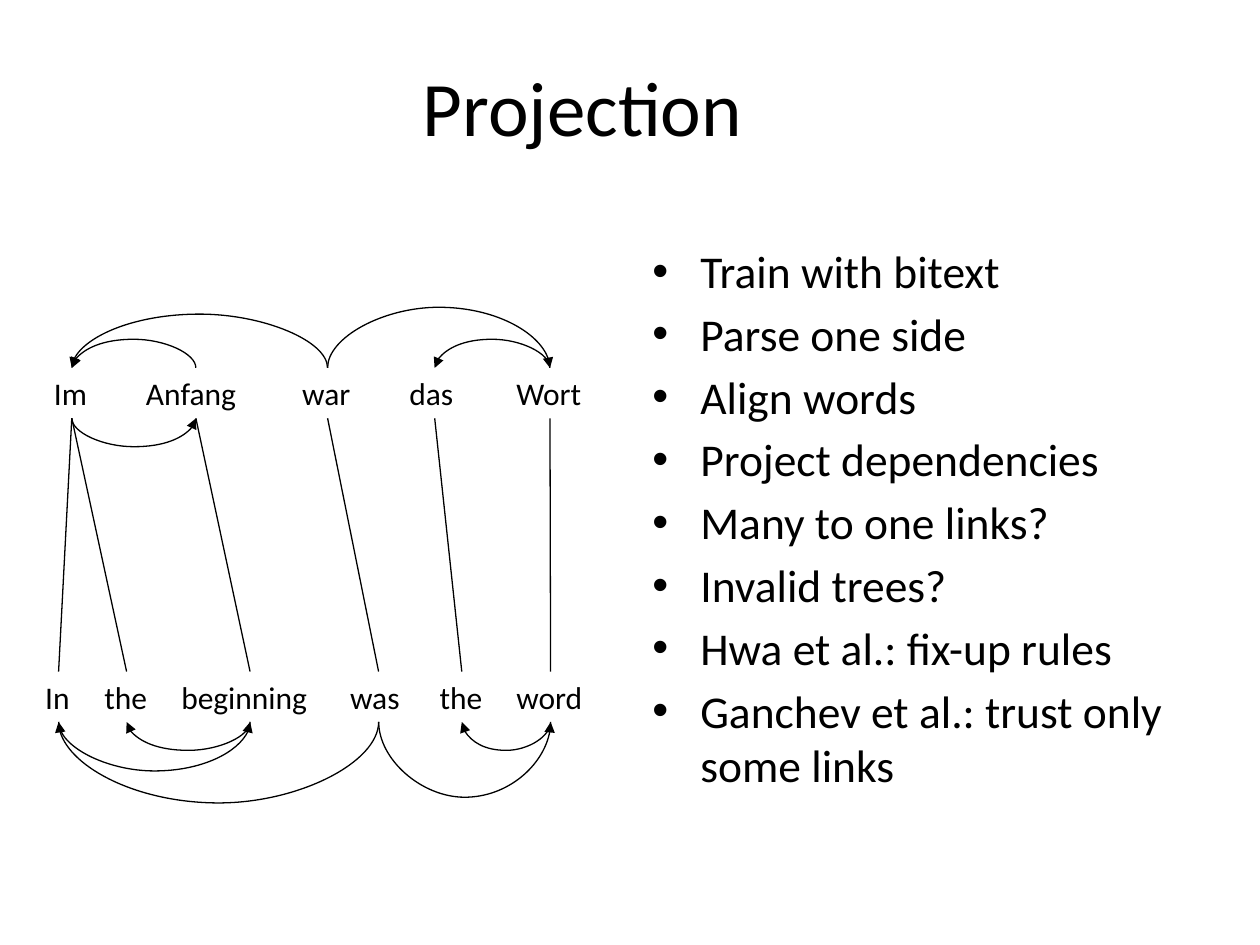
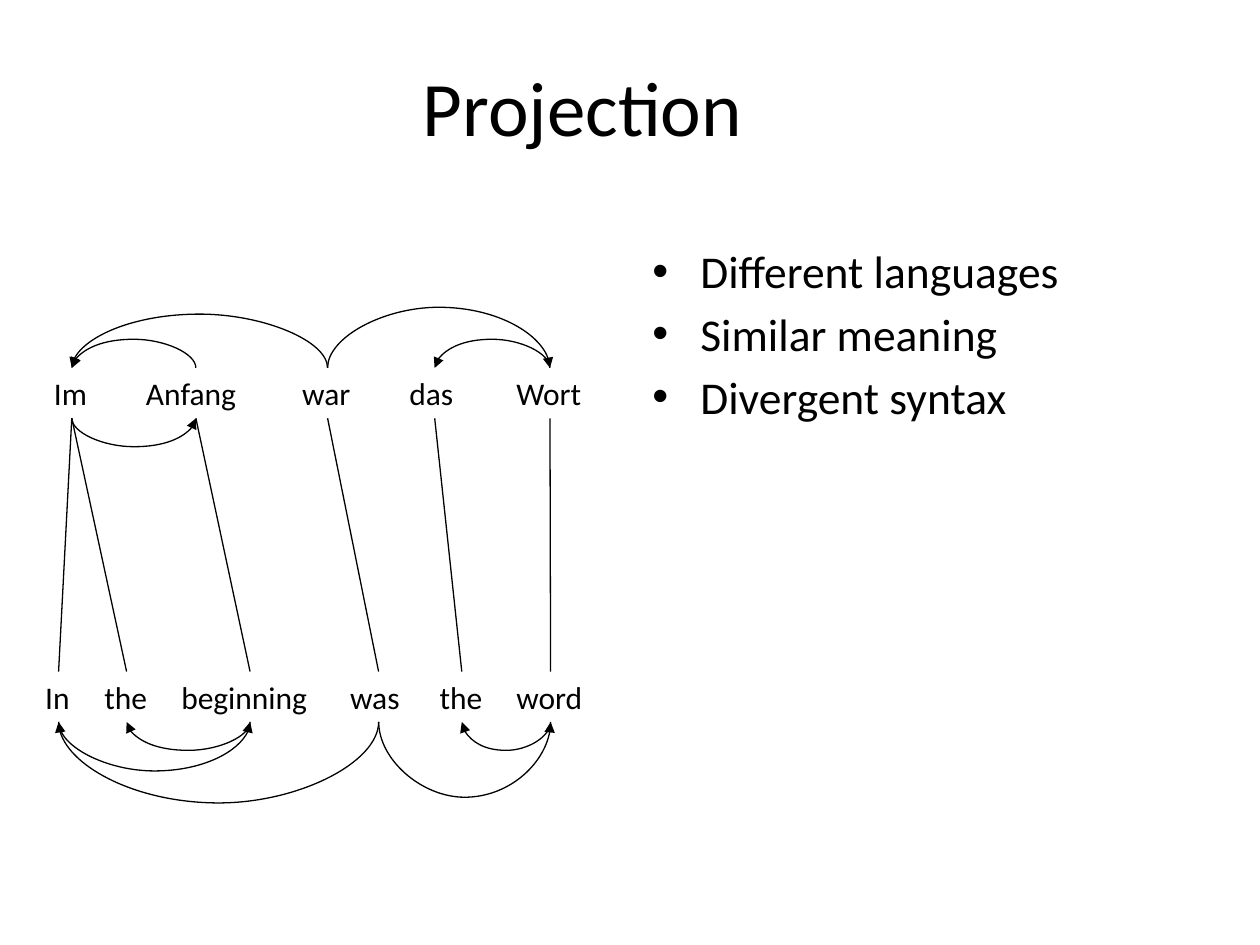
from dataclasses import dataclass

from lxml import etree
from pptx import Presentation
from pptx.dml.color import RGBColor
from pptx.enum.shapes import MSO_CONNECTOR
from pptx.enum.text import MSO_ANCHOR, MSO_AUTO_SIZE, PP_ALIGN
from pptx.oxml.ns import qn
from pptx.util import Emu, Pt

STRAIGHT, CURVE = MSO_CONNECTOR.STRAIGHT, MSO_CONNECTOR.CURVE
MIDDLE, CENTER = MSO_ANCHOR.MIDDLE, PP_ALIGN.CENTER
FIT_SHAPE = MSO_AUTO_SIZE.SHAPE_TO_FIT_TEXT
TOP, BOTTOM = 0, 2  # connection sites of a word box

PX_EMU = 9144  # 100 px to the inch
ARC_BASE = 1588  # EMU; arc depths are given as multiples of this thickness
FONT = "Calibri"
COLORS = {"ink": "000000", "paper": "FFFFFF"}
TITLE_ONLY = 5
WORD_HEIGHT = 40
GERMAN_TOP, ENGLISH_TOP = 292, 533


@dataclass(frozen=True)
class Word:
    text: str
    left: int
    width: int


@dataclass(frozen=True)
class Dependency:
    """An arc from head word to dependent word, leaving the given side."""
    head: int
    dependent: int
    side: int
    depth: int


GERMAN = [Word("Im", 33, 48), Word("Anfang", 106, 99), Word("war", 230, 60),
          Word("das", 315, 60), Word("Wort", 400, 73)]
ENGLISH = [Word("In", 26, 41), Word("the", 73, 55), Word("beginning", 134, 129),
           Word("was", 268, 65), Word("the", 339, 55), Word("word", 400, 74)]

GERMAN_TREE = [Dependency(2, 0, TOP, 47), Dependency(2, 4, TOP, 53),
               Dependency(4, 3, TOP, 25), Dependency(1, 0, TOP, 25),
               Dependency(0, 1, BOTTOM, 25)]
ENGLISH_TREE = [Dependency(2, 1, BOTTOM, 25), Dependency(0, 2, BOTTOM, 43),
                Dependency(3, 0, BOTTOM, 71), Dependency(3, 5, BOTTOM, 66),
                Dependency(5, 4, BOTTOM, 25)]
# (German word, English word)
ALIGNMENT = [(0, 0), (0, 1), (1, 2), (2, 3), (3, 4), (4, 5)]

SLIDE_POINTS = [
    ["Train with bitext", "Parse one side", "Align words", "Project dependencies",
     "Many to one links?", "Invalid trees?", "Hwa et al.: fix-up rules",
     "Ganchev et al.: trust only some links"],
    ["Different languages", "Similar meaning", "Divergent syntax"],
]


def px(length: int) -> Emu:
    return Emu(length * PX_EMU)


def color(name: str) -> RGBColor:
    return RGBColor.from_string(COLORS[name])


def format_runs(paragraph, size: int) -> None:
    for run in paragraph.runs:
        run.font.name = FONT
        run.font.size = Pt(size)
        run.font.color.rgb = color("ink")


def set_title(slide, text: str) -> None:
    title = slide.shapes.title
    title.left, title.top, title.width, title.height = map(px, (50, 13, 825, 142))
    frame = title.text_frame
    frame.text = text
    frame.vertical_anchor = MIDDLE
    frame.paragraphs[0].alignment = CENTER
    format_runs(frame.paragraphs[0], 44)


def add_points(slide, points: list[str]) -> None:
    frame = slide.shapes.add_textbox(*map(px, (508, 188, 442, 482))).text_frame
    frame.word_wrap = True
    frame.text = "\n".join(points)
    for paragraph in frame.paragraphs:
        paragraph.space_before = Pt(4.7)
        format_runs(paragraph, 26)
        properties = paragraph._p.get_or_add_pPr()
        properties.set("marL", str(px(38)))
        properties.set("indent", str(px(-38)))
        etree.SubElement(properties, qn("a:buFont"), typeface="Arial")
        etree.SubElement(properties, qn("a:buChar"), char="•")


def add_sentence(slide, words: list[Word], top: int) -> list:
    boxes = []
    for word in words:
        box = slide.shapes.add_textbox(*map(px, (word.left, top, word.width, WORD_HEIGHT)))
        frame = box.text_frame
        frame.word_wrap = False
        frame.auto_size = FIT_SHAPE
        frame.text = word.text
        format_runs(frame.paragraphs[0], 18)
        boxes.append(box)
    return boxes


def join(slide, kind, start, start_side: int, end, end_side: int):
    """Connect two word boxes with a thin line that has no shadow."""
    link = slide.shapes.add_connector(kind, 0, 0, 0, 0)
    link.begin_connect(start, start_side)
    link.end_connect(end, end_side)
    link.line.color.rgb = color("ink")
    link.line.width = Pt(0.75)
    etree.SubElement(link._element.spPr, qn("a:effectLst"))
    return link


def add_dependency(slide, boxes: list, dependency: Dependency) -> None:
    head, dependent = boxes[dependency.head], boxes[dependency.dependent]
    side = dependency.side
    arc = join(slide, CURVE, head, side, dependent, side)
    etree.SubElement(arc.line._get_or_add_ln(), qn("a:tailEnd"), type="triangle")

    # The arc is a quarter-turned connector whose own x axis points down.
    start, end, level = arc.begin_x, arc.end_x, arc.begin_y
    span = abs(end - start)
    arc.left = Emu((start + end - ARC_BASE) // 2)
    arc.top = Emu(level - span // 2)
    arc.width, arc.height = Emu(ARC_BASE), Emu(span)
    rightward, above = end > start, side == TOP
    frame = arc._element.spPr.find(qn("a:xfrm"))
    quarter_turns = 1 if rightward == above else 3
    frame.set("rot", str(quarter_turns * 5400000))
    frame.set("flipH", str(int(quarter_turns == 3)))
    frame.set("flipV", str(int(above)))

    depth = px(-dependency.depth if above else dependency.depth)
    guides = arc._element.spPr.find(qn("a:prstGeom")).get_or_add_avLst()
    etree.SubElement(guides, qn("a:gd"), name="adj1",
                     fmla=f"val {round(depth / ARC_BASE * 100000)}")


def add_bitext(slide) -> None:
    """Draw both sentences, their dependency trees and the word alignment."""
    german = add_sentence(slide, GERMAN, GERMAN_TOP)
    english = add_sentence(slide, ENGLISH, ENGLISH_TOP)
    for boxes, tree in ((german, GERMAN_TREE), (english, ENGLISH_TREE)):
        for dependency in tree:
            add_dependency(slide, boxes, dependency)
    for source, target in ALIGNMENT:
        join(slide, STRAIGHT, german[source], BOTTOM, english[target], TOP)


def main() -> None:
    deck = Presentation()
    deck.slide_width, deck.slide_height = px(1000), px(750)
    for points in SLIDE_POINTS:
        slide = deck.slides.add_slide(deck.slide_layouts[TITLE_ONLY])
        slide.background.fill.solid()
        slide.background.fill.fore_color.rgb = color("paper")
        set_title(slide, "Projection")
        add_points(slide, points)
        add_bitext(slide)
    deck.save("out.pptx")


if __name__ == "__main__":
    main()
